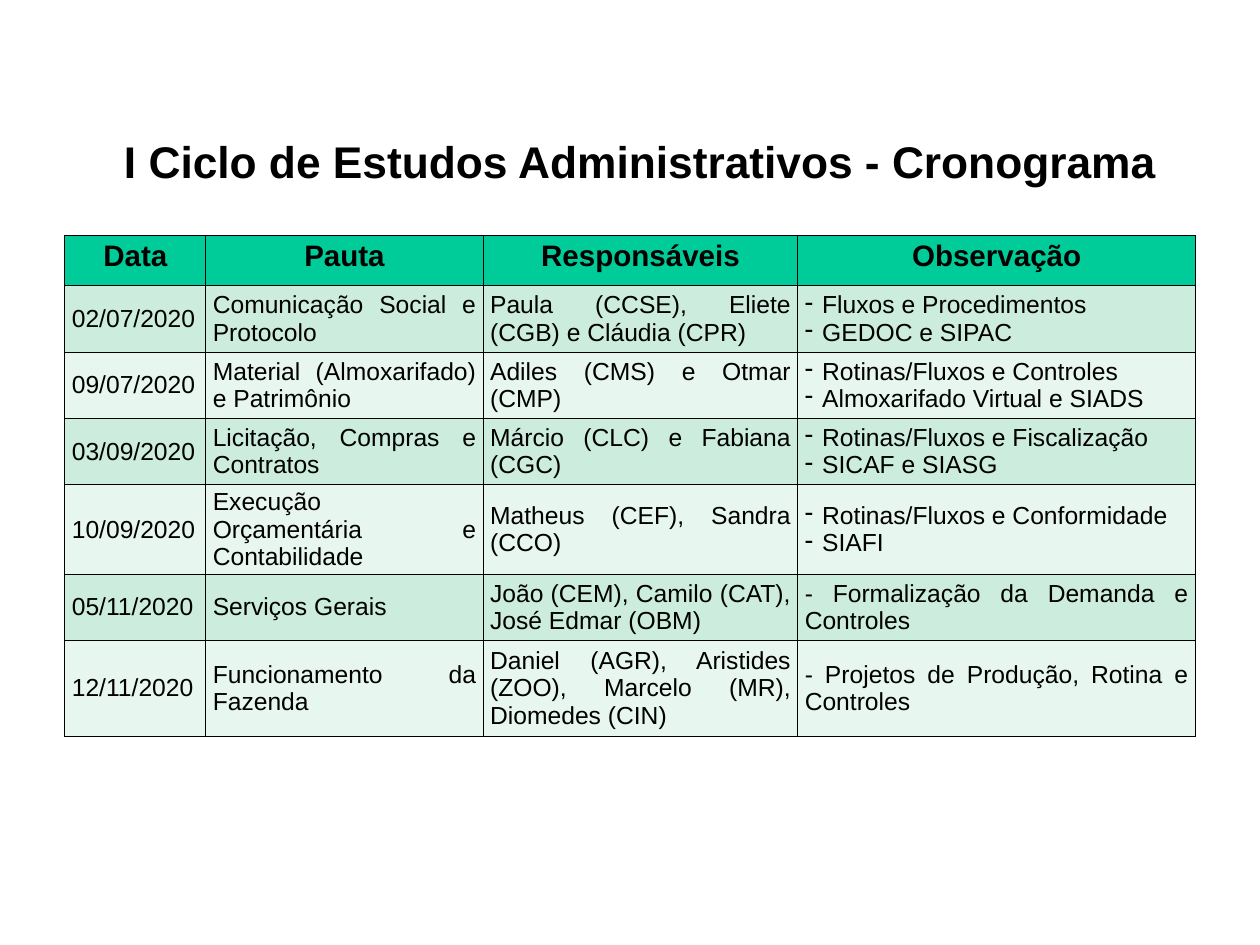
from lxml.etree import SubElement
from pptx import Presentation
from pptx.dml.color import RGBColor
from pptx.enum.text import MSO_ANCHOR as Anchor, MSO_AUTO_SIZE as AutoSize, PP_ALIGN as Align
from pptx.oxml.ns import qn
from pptx.util import Cm, Pt

BLACK = RGBColor(0x00, 0x00, 0x00)
HEADER_GREEN = RGBColor(0x00, 0xCC, 0x99)
BAND_GREEN = RGBColor(0xCC, 0xEC, 0xDE)
PALE_GREEN = RGBColor(0xE7, 0xF6, 0xEF)

TITLE = "I Ciclo de Estudos Administrativos - Cronograma"
HEADINGS = ["Data", "Pauta", "Responsáveis", "Observação"]
MEETINGS = [
    ["02/07/2020", "Comunicação Social e Protocolo",
     "Paula (CCSE), Eliete (CGB) e Cláudia (CPR)",
     "Fluxos e Procedimentos\nGEDOC e SIPAC"],
    ["09/07/2020", "Material (Almoxarifado) e Patrimônio",
     "Adiles (CMS) e Otmar (CMP)",
     "Rotinas/Fluxos e Controles\nAlmoxarifado Virtual e SIADS"],
    ["03/09/2020", "Licitação, Compras e Contratos",
     "Márcio (CLC) e Fabiana (CGC)",
     "Rotinas/Fluxos e Fiscalização\nSICAF e SIASG"],
    ["10/09/2020", "Execução Orçamentária e Contabilidade",
     "Matheus (CEF), Sandra (CCO)",
     "Rotinas/Fluxos e Conformidade\nSIAFI"],
    ["05/11/2020", "Serviços Gerais",
     "João (CEM), Camilo (CAT), José Edmar (OBM)",
     "- Formalização da Demanda e Controles"],
    ["12/11/2020", "Funcionamento da Fazenda",
     "Daniel (AGR), Aristides (ZOO), Marcelo (MR), Diomedes (CIN)",
     "- Projetos de Produção, Rotina e Controles"],
]
COLUMN_WIDTHS = [4.04, 7.95, 9.02, 11.4]
ROW_HEIGHTS = [1.44, 1.9, 1.9, 1.9, 2.55, 1.9, 2.75]


def format_text(frame, size, bold, align):
    """Give every paragraph of a text frame one font and alignment."""
    for paragraph in frame.paragraphs:
        paragraph.alignment = align
        for run in paragraph.runs:
            run.font.name = "Arial"
            run.font.size = Pt(size)
            run.font.bold = bold
            run.font.color.rgb = BLACK


def add_dash(paragraph):
    """Turn a paragraph into a list item with a hanging dash."""
    properties = paragraph._p.get_or_add_pPr()
    properties.set("marL", str(Cm(0.5)))
    properties.set("indent", str(Cm(-0.5)))
    SubElement(properties, qn("a:buChar"), char="-")


def add_borders(cell):
    """Draw a thin black line on all four sides of a cell."""
    properties = cell._tc.get_or_add_tcPr()
    for side in ("lnL", "lnR", "lnT", "lnB"):
        border = SubElement(properties, qn(f"a:{side}"), w=str(Pt(1)))
        fill = SubElement(border, qn("a:solidFill"))
        SubElement(fill, qn("a:srgbClr"), val=str(BLACK))


def fill_cell(cell, text, color, size, bold, align, anchor, margins):
    """Write, format, border and colour one table cell."""
    cell.text_frame.text = text
    side, edge = margins
    cell.margin_left = cell.margin_right = Cm(side)
    cell.margin_top = cell.margin_bottom = Cm(edge)
    cell.vertical_anchor = anchor
    add_borders(cell)
    cell.fill.solid()
    cell.fill.fore_color.rgb = color
    items = cell.text_frame.paragraphs
    if len(items) > 1:
        for item in items:
            add_dash(item)
    format_text(cell.text_frame, size, bold, align)


def set_title(slide):
    """Place and format the slide title."""
    title = slide.shapes.title
    title.left, title.top, title.width, title.height = Cm(1.65), Cm(3.94), Cm(33.4), Cm(1.5)
    frame = title.text_frame
    frame.text = TITLE
    frame.auto_size = AutoSize.NONE
    frame.vertical_anchor = Anchor.MIDDLE
    frame.margin_left = frame.margin_right = frame.margin_top = frame.margin_bottom = 0
    frame.paragraphs[0].line_spacing = 0.93
    format_text(frame, 36, True, Align.CENTER)


def add_schedule(slide):
    """Add the table of meetings."""
    schedule = slide.shapes.add_table(
        len(ROW_HEIGHTS), len(COLUMN_WIDTHS), Cm(1.86), Cm(6.75),
        Cm(sum(COLUMN_WIDTHS)), Cm(sum(ROW_HEIGHTS))).table
    schedule.horz_banding = False
    for column, width in zip(schedule.columns, COLUMN_WIDTHS):
        column.width = Cm(width)
    for row, height in zip(schedule.rows, ROW_HEIGHTS):
        row.height = Cm(height)
    for cell, heading in zip(schedule.rows[0].cells, HEADINGS):
        fill_cell(cell, heading, HEADER_GREEN, 24, True, Align.CENTER,
                  Anchor.TOP, (0.25, 0.13))
    for number, meeting in enumerate(MEETINGS, start=1):
        color = BAND_GREEN if number % 2 else PALE_GREEN
        for column, text in enumerate(meeting):
            align = Align.JUSTIFY if column else Align.LEFT
            fill_cell(schedule.cell(number, column), text, color, 20, False,
                      align, Anchor.MIDDLE, (0.2, 0.1))


def main():
    """Build the slide and save it."""
    deck = Presentation()
    deck.slide_width, deck.slide_height = Cm(36.12), Cm(27.08)
    slide = deck.slides.add_slide(deck.slide_layouts[5])
    set_title(slide)
    add_schedule(slide)
    deck.save("out.pptx")


if __name__ == "__main__":
    main()
